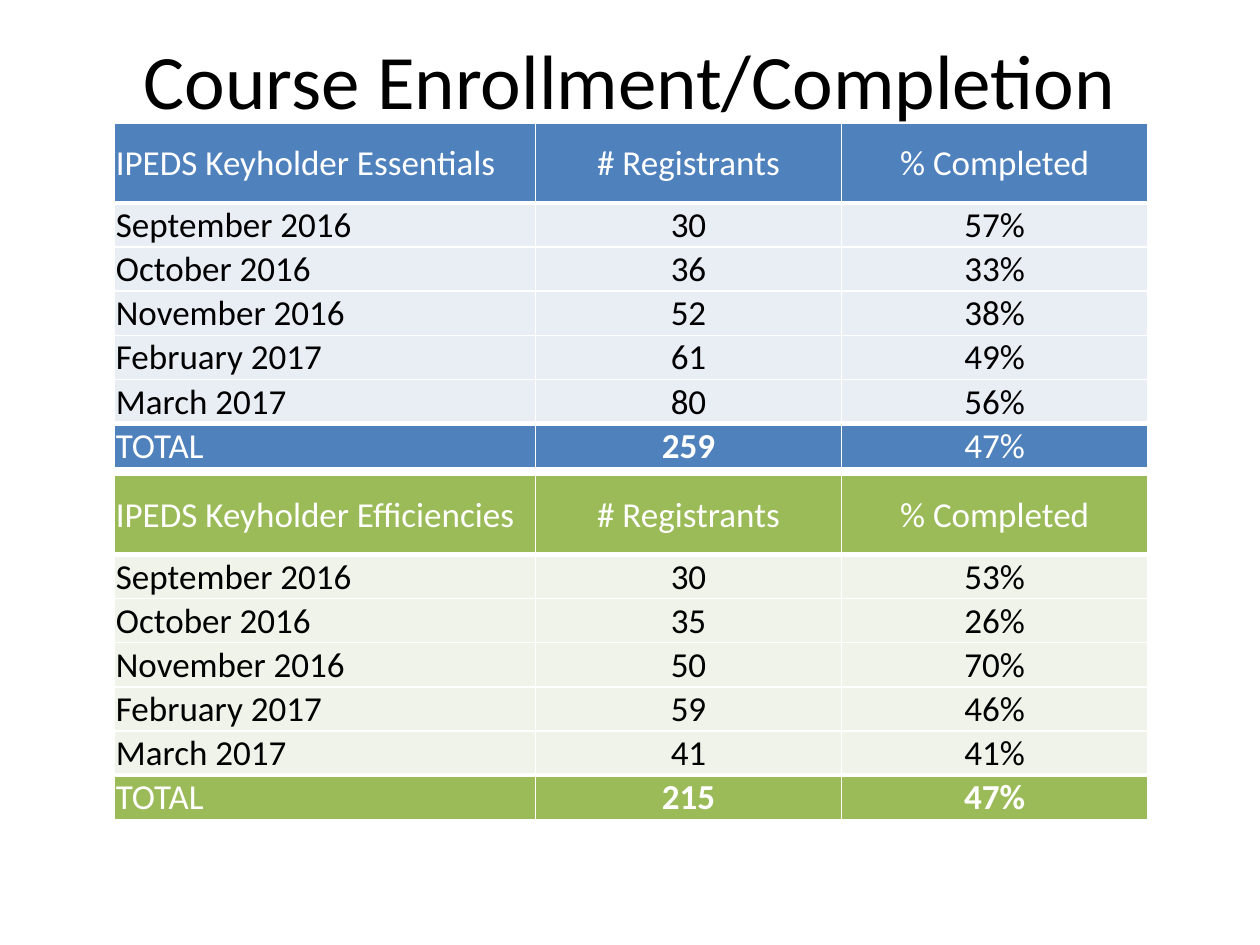
"""Build the course enrollment and completion slide."""
import pptx
import pptx.util
import pptx.dml.color
import pptx.enum.text
import pptx.oxml
import pptx.oxml.ns
from pptx.util import Inches

HUES = {
    "white": "FFFFFF", "black": "000000",
    "blue": "4F81BD", "pale blue": "E9EDF4",
    "green": "9BBB59", "pale green": "EFF3EA",
}
ALIGN = pptx.enum.text.PP_ALIGN
MIDDLE = pptx.enum.text.MSO_ANCHOR.MIDDLE


def write(frame, text, size=20, hue="black", bold=False, align=ALIGN.CENTER):
    """Put one formatted run into a text frame."""
    para = frame.paragraphs[0]
    para.alignment = align
    run = para.add_run()
    run.text = text
    run.font.name = "Calibri"
    run.font.size = pptx.util.Pt(size)
    run.font.bold = bold
    run.font.color.rgb = pptx.dml.color.RGBColor.from_string(HUES[hue])


def border(cell, **widths):
    """Draw white cell borders with the given widths in points."""
    props = cell._tc.get_or_add_tcPr()
    for side in "LRTB":
        width = pptx.util.Pt(widths.get(side, 1))
        props.append(pptx.oxml.parse_xml(
            f'<a:ln{side} {pptx.oxml.ns.nsdecls("a")} w="{width}"><a:solidFill>'
            f'<a:srgbClr val="{HUES["white"]}"/></a:solidFill></a:ln{side}>'))


deck = pptx.Presentation()
deck.slide_width, deck.slide_height = Inches(10), Inches(7.5)
slide = deck.slides.add_slide(deck.slide_layouts[5])

title = slide.shapes.title
title.left, title.top = Inches(0.5), Inches(0)
title.width, title.height = Inches(9), Inches(1.25)
title.text_frame.vertical_anchor = MIDDLE
write(title.text_frame, "Course Enrollment/Completion", size=44)

months = ["September 2016", "October 2016", "November 2016",
          "February 2017", "March 2017", "TOTAL"]
courses = [
    ("IPEDS Keyholder Essentials", "blue", 0.98,
     ["30", "36", "52", "61", "80", "259"],
     ["57%", "33%", "38%", "49%", "56%", "47%"], [1]),
    ("IPEDS Keyholder Efficiencies", "green", 3.77,
     ["30", "35", "50", "59", "41", "215"],
     ["53%", "26%", "70%", "46%", "41%", "47%"], [1, 2]),
]

for name, hue, top, counts, rates, strong in courses:
    rows = [(name, "# Registrants", "% Completed"), *zip(months, counts, rates)]
    last = len(rows) - 1
    table = slide.shapes.add_table(
        len(rows), 3, Inches(0.91), Inches(top), Inches(8.19), Inches(2.68)).table
    table.horz_banding = False
    table.last_row = True
    for col, width in zip(table.columns, [3.34, 2.43, 2.43]):
        col.width = Inches(width)
    for r, row in enumerate(rows):
        table.rows[r].height = Inches(0.34 if r else 0.63)
        edge = r in (0, last)
        for c, text in enumerate(row):
            cell = table.cell(r, c)
            cell.margin_left = cell.margin_right = cell.margin_top = Inches(0.01)
            cell.margin_bottom = 0
            cell.vertical_anchor = MIDDLE
            border(cell, T=3 if r == last else 1, B=1 if r else 3)
            cell.fill.solid()
            cell.fill.fore_color.rgb = pptx.dml.color.RGBColor.from_string(
                HUES[hue if edge else f"pale {hue}"])
            write(cell.text_frame, text, hue="white" if edge else "black",
                  bold=r == last and c in strong,
                  align=ALIGN.CENTER if c else ALIGN.LEFT)

deck.save("out.pptx")
